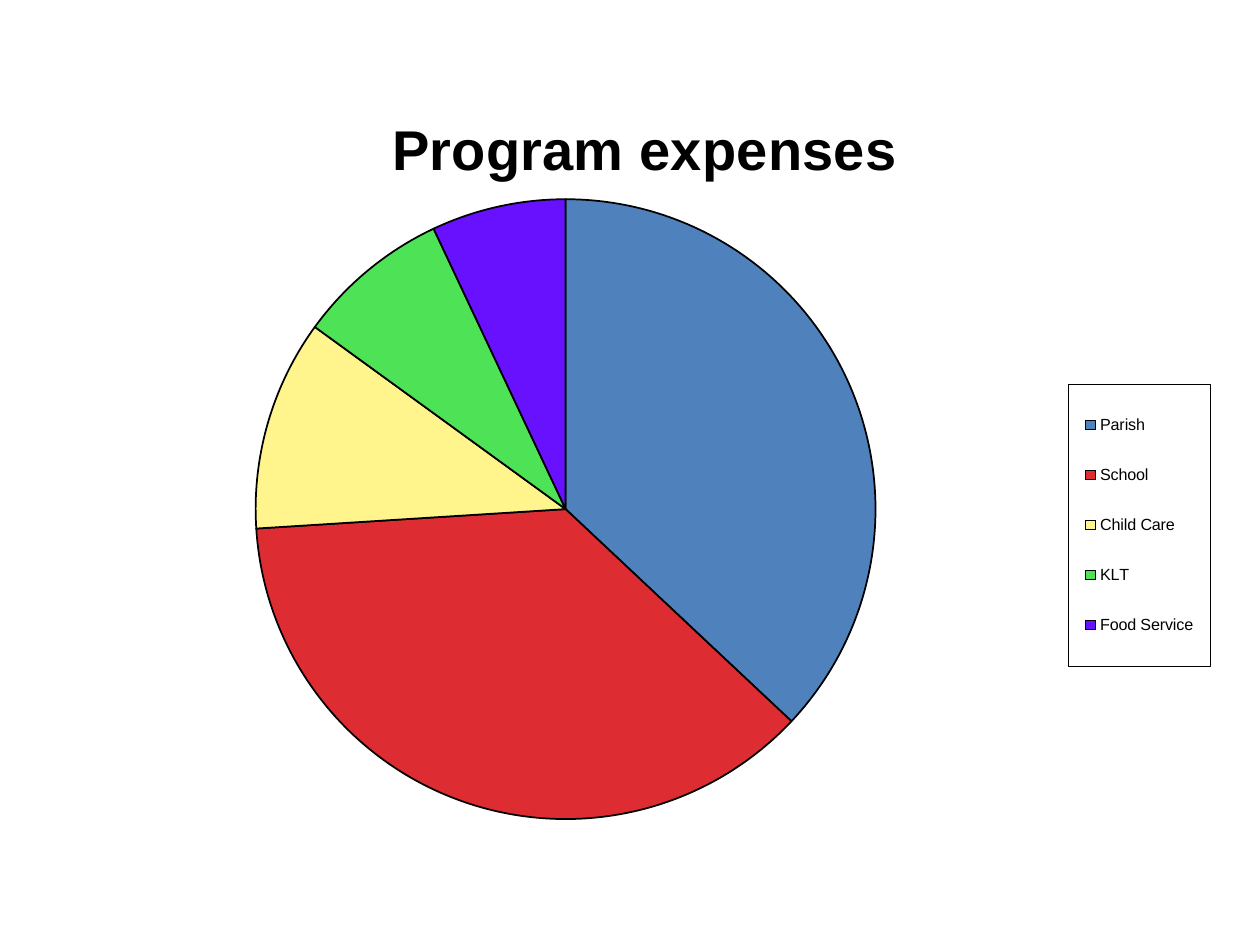
from lxml import etree
from pptx import Presentation
from pptx import util as u
from pptx.chart.data import CategoryChartData
from pptx.dml.color import RGBColor
from pptx.enum import chart as charts
from pptx.oxml import parse_xml
from pptx.oxml.ns import nsdecls, qn

FONT = "Arial"
BLACK = "000000"
PROGRAMS = [
    ("Parish", 37, "4F81BD"),
    ("School", 37, "DD2D32"),
    ("Child Care", 11, "FFF58C"),
    ("KLT", 8, "4EE257"),
    ("Food Service", 7, "6711FF"),
]


def color(value):
    return RGBColor.from_string(value)


def set_font(font, size, bold=False):
    font.name = FONT
    font.size = u.Pt(size)
    font.bold = bold
    font.color.rgb = color(BLACK)


def place(element, position, x, y, width=None, height=None, inner=False):
    """Give a chart part a manual layout in fractions of the chart."""
    for old in element.findall(qn("c:layout")):
        element.remove(old)
    layout = parse_xml(f"<c:layout {nsdecls('c')}><c:manualLayout/></c:layout>")
    settings = [("layoutTarget", "inner" if inner else None),
                ("xMode", "edge"), ("yMode", "edge"),
                ("x", x), ("y", y), ("w", width), ("h", height)]
    for name, value in settings:
        if value is not None:
            etree.SubElement(layout[0], qn(f"c:{name}"), val=str(value))
    element.insert(position, layout)


def add_pie(page):
    data = CategoryChartData()
    data.categories = [name for name, _, _ in PROGRAMS]
    data.add_series("Series 1", [value for _, value, _ in PROGRAMS])
    frame = page.shapes.add_chart(
        charts.XL_CHART_TYPE.PIE,
        u.Cm(0.79), u.Cm(1.42), u.Cm(23.85), u.Cm(16.23), data)
    chart = frame.chart
    set_font(chart.font, 10)
    plot_area = chart.plots[0]._element.getparent()
    place(plot_area, 0, 0.18, 0.16, 0.53, 0.77, inner=True)
    return chart


def color_slices(chart):
    series = chart.plots[0].series[0]
    for index, (_, _, fill) in enumerate(PROGRAMS):
        slice_format = series.points[index].format
        slice_format.fill.solid()
        slice_format.fill.fore_color.rgb = color(fill)
        slice_format.line.color.rgb = color(BLACK)
        slice_format.line.width = u.Pt(1)


def add_title(chart, words):
    chart.has_title = True
    title = chart.chart_title
    para = title.text_frame.paragraphs[0]
    para.text = words
    set_font(para.font, 32, bold=True)
    place(title._element, 1, 0.29, 0.04)


def add_legend(chart):
    chart.has_legend = True
    legend = chart.legend
    legend.position = charts.XL_LEGEND_POSITION.RIGHT
    legend.include_in_layout = False
    set_font(legend.font, 9.2)
    place(legend._element, 1, 0.87, 0.39, 0.12, 0.35)
    # Thin frame around the legend
    border = parse_xml(
        f"<c:spPr {nsdecls('c', 'a')}><a:noFill/><a:ln w='3175'><a:solidFill>"
        f"<a:srgbClr val='{BLACK}'/></a:solidFill></a:ln></c:spPr>")
    legend._element.find(qn("c:overlay")).addnext(border)


def main():
    deck = Presentation()
    deck.slide_width, deck.slide_height = u.Cm(25.4), u.Cm(19.05)
    page = deck.slides.add_slide(deck.slide_layouts[6])

    # Pie chart with its title and legend
    chart = add_pie(page)
    color_slices(chart)
    add_title(chart, "Program expenses")
    add_legend(chart)

    deck.save("out.pptx")


if __name__ == "__main__":
    main()
